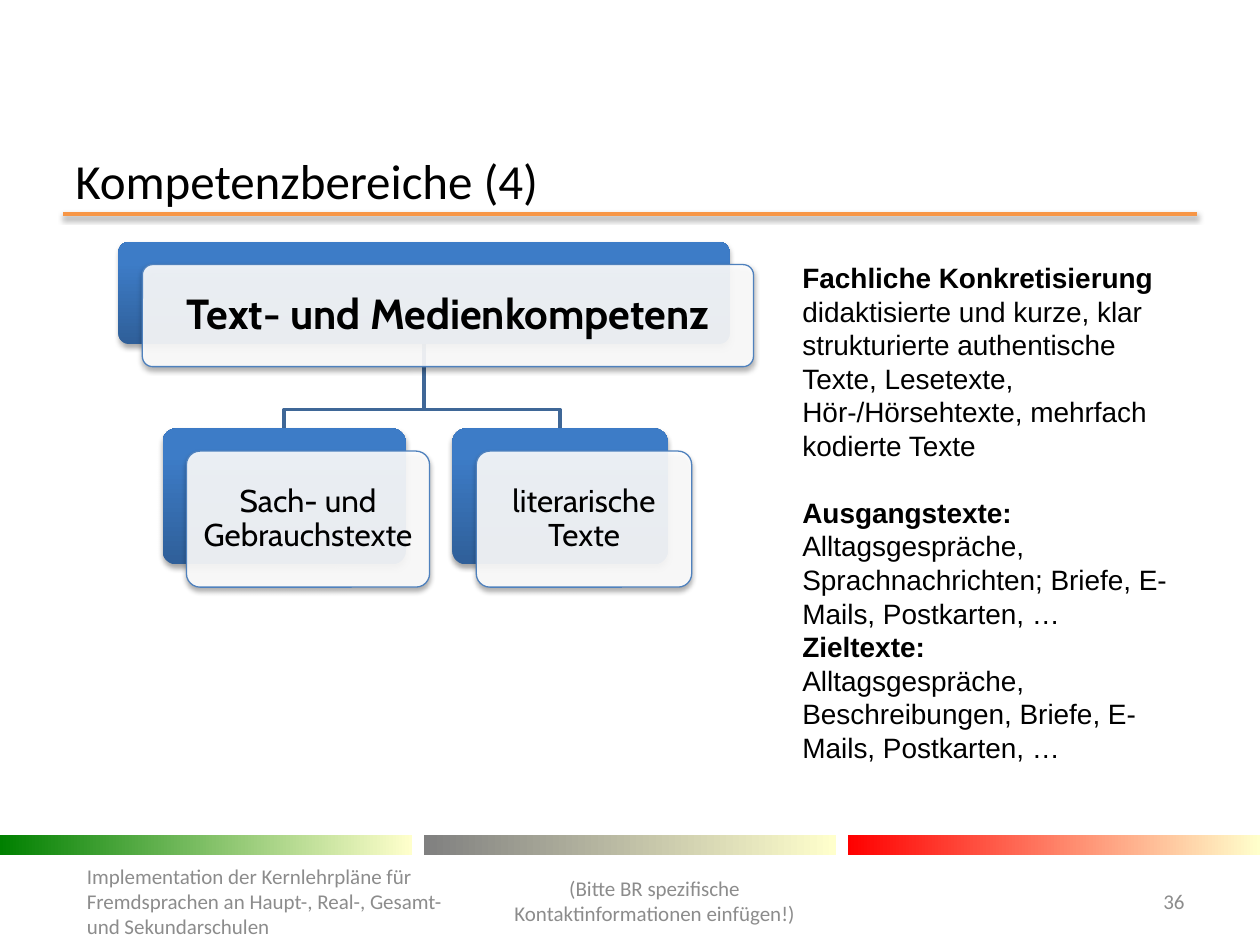
import pptx
import pptx.util
import pptx.dml.color
import pptx.enum.shapes
import pptx.enum.text
import pptx.oxml
import pptx.oxml.ns
from lxml import etree

Inches = pptx.util.Inches
Pt = pptx.util.Pt
ALIGN = pptx.enum.text.PP_ALIGN
ANCHOR = pptx.enum.text.MSO_ANCHOR
SHAPE = pptx.enum.shapes.MSO_SHAPE
qn = pptx.oxml.ns.qn

COLORS = {
    "text": "000000", "footer": "8C8C8C", "rule": "F79646",
    "branch": "3F6797", "card": "FFFFFF", "card_line": "4F81BD",
    "card_dark": "2F5F99", "card_light": "3D7CC7",
    "green": "008000", "gray": "808080", "red": "FF0000", "cream": "FFFFCC",
}
CARD_OFFSET = (0.19, 0.18)


def rgb(name):
    return pptx.dml.color.RGBColor.from_string(COLORS[name])


def add_shadow(shape, opacity, distance):
    effects = etree.SubElement(shape._element.spPr, qn("a:effectLst"))
    shadow = etree.SubElement(
        effects, qn("a:outerShdw"), blurRad=str(Pt(3.1)), dist=str(Pt(distance)),
        dir="5400000", rotWithShape="0")
    color = etree.SubElement(shadow, qn("a:srgbClr"), val=COLORS["text"])
    etree.SubElement(color, qn("a:alpha"), val=str(opacity * 1000))


def fill_gradient(shape, start, end, angle, end_position=1):
    shape.fill.gradient()
    shape.fill.gradient_angle = angle
    first, last = shape.fill.gradient_stops
    first.color.rgb, first.position = rgb(start), 0
    last.color.rgb, last.position = rgb(end), end_position


def add_text(slide, box, paragraphs, font, size, color="text",
             align=ALIGN.LEFT, anchor=ANCHOR.MIDDLE, bold=None):
    shape = slide.shapes.add_textbox(*map(Inches, box))
    frame = shape.text_frame
    frame.word_wrap = True
    frame.vertical_anchor = anchor
    for index, runs in enumerate(paragraphs):
        paragraph = frame.paragraphs[0] if index == 0 else frame.add_paragraph()
        paragraph.alignment = align
        paragraph.font.name = font
        paragraph.font.size = Pt(size)
        paragraph.font.color.rgb = rgb(color)
        paragraph.font.bold = bold
        for text, run_bold in runs:
            run = paragraph.add_run()
            run.text = text
            run.font.bold = run_bold
    return frame


def add_title(slide, box):
    left, top, width, height = box
    add_text(slide, box, [[("Kompetenzbereiche (4)", None)]], "Calibri", 28)
    rule = slide.shapes.add_connector(
        pptx.enum.shapes.MSO_CONNECTOR.STRAIGHT,
        Inches(left), Inches(top + 0.47), Inches(left + width), Inches(top + 0.47))
    rule.line.color.rgb = rgb("rule")
    rule.line.width = Pt(2)
    add_shadow(rule, 38, 1.6)


def add_branch(slide, parent, child):
    start_x = parent[0] + parent[2] / 2
    start_y = parent[1] + parent[3]
    end_x = child[0] + child[2] / 2
    middle_y = child[1] - 0.15
    builder = slide.shapes.build_freeform(Inches(start_x), Inches(start_y))
    builder.add_line_segments(
        [(Inches(x), Inches(y)) for x, y in
         ((start_x, middle_y), (end_x, middle_y), (end_x, child[1]))], close=False)
    branch = builder.convert_to_shape()
    branch.fill.background()
    branch.line.color.rgb = rgb("branch")
    branch.line.width = Pt(2)
    branch.shadow.inherit = False


def add_card(slide, box, text, size, bold, inset):
    left, top, width, height = box
    front_box = (left + CARD_OFFSET[0], top + CARD_OFFSET[1], width, height)
    back, front = (slide.shapes.add_shape(SHAPE.ROUNDED_RECTANGLE, *map(Inches, place))
                   for place in (box, front_box))
    for shape in (back, front):
        shape.adjustments[0] = 0.1
    fill_gradient(back, "card_dark", "card_light", 90, 0.8)
    back.line.fill.background()
    front.fill.solid()
    front.fill.fore_color.rgb = rgb("card")
    color = front._element.spPr.find(qn("a:solidFill")).find(qn("a:srgbClr"))
    etree.SubElement(color, qn("a:alpha"), val="90000")
    front.line.color.rgb = rgb("card_line")
    front.line.width = Pt(0.75)
    for shape in (back, front):
        add_shadow(shape, 35, 1.8)
    label_box = (front_box[0] + 0.03, front_box[1] + 0.03, width - 0.06, height - 0.06)
    frame = add_text(slide, label_box, [[(text, None)]], "Cabin", size,
                     align=ALIGN.CENTER, bold=bold)
    frame.margin_left = frame.margin_right = Inches(inset)
    frame.margin_top = frame.margin_bottom = Inches(inset)
    frame.paragraphs[0].line_spacing = 0.9


def add_hierarchy(slide, box):
    left, top, width, height = box
    root = (left, top, width, 0.81)
    child_top = top + 1.48
    children = [
        ((left + 0.35, child_top, 1.93, 1.08), "Sach- und Gebrauchstexte"),
        ((left + 2.65, child_top, 1.71, 1.08), "literarische Texte"),
    ]
    for child, text in reversed(children):
        add_branch(slide, root, child)
    add_card(slide, root, "Text- und Medienkompetenz", 24, True, 0.1)
    for child, text in children:
        add_card(slide, child, text, 18, False, 0.07)


def add_details(slide, box):
    frame = add_text(slide, box, [
        [("Fachliche Konkretisierung", True)],
        [("didaktisierte und kurze, klar strukturierte authentische Texte, Lesetexte, "
          "Hör-/Hörsehtexte, mehrfach kodierte Texte", False)],
        [("Ausgangstexte: ", True),
         ("Alltagsgespräche, Sprachnachrichten; Briefe, E-Mails, Postkarten, …", False)],
        [("Zieltexte:", True)],
        [("Alltagsgespräche, Beschreibungen, Briefe, E-Mails, Postkarten, …", False)],
    ], "Arial", 16, anchor=ANCHOR.TOP)
    frame.paragraphs[2].space_before = Pt(19)


def add_footer(slide, box):
    left, top, width, height = box
    bar_width = 3.27
    step = (width - bar_width) / 2
    for index, color in enumerate(("green", "gray", "red")):
        bar = slide.shapes.add_shape(
            SHAPE.RECTANGLE, Inches(left + index * step), Inches(top),
            Inches(bar_width), Inches(0.16))
        fill_gradient(bar, color, "cream", 0)
        bar.line.fill.background()
        bar.shadow.inherit = False
    notes = [
        ((left + 0.59, top + 0.18, 3.15, 0.68), ALIGN.LEFT,
         "Implementation der Kernlehrpläne für Fremdsprachen an Haupt-, Real-, "
         "Gesamt- und Sekundarschulen"),
        ((left + 3.74, top + 0.16, 2.91, 0.71), ALIGN.CENTER,
         "(Bitte BR spezifische Kontaktinformationen einfügen!)"),
        ((left + 8.86, top + 0.32, 0.64, 0.4), ALIGN.RIGHT, "36"),
    ]
    for note_box, align, text in notes:
        add_text(slide, note_box, [[(text, None)]], "Calibri", 12, "footer", align)


def main():
    presentation = pptx.Presentation()
    presentation.slide_width = Inches(10)
    presentation.slide_height = Inches(7.5)
    slide = presentation.slides.add_slide(presentation.slide_layouts[6])
    add_title(slide, (0.5, 1.23, 9, 0.39))
    add_hierarchy(slide, (0.94, 1.92, 4.85, 2.56))
    add_details(slide, (6.27, 2.02, 3.24, 4.64))
    add_footer(slide, (0, 6.63, 10, 0.87))
    presentation.save("out.pptx")


if __name__ == "__main__":
    main()
